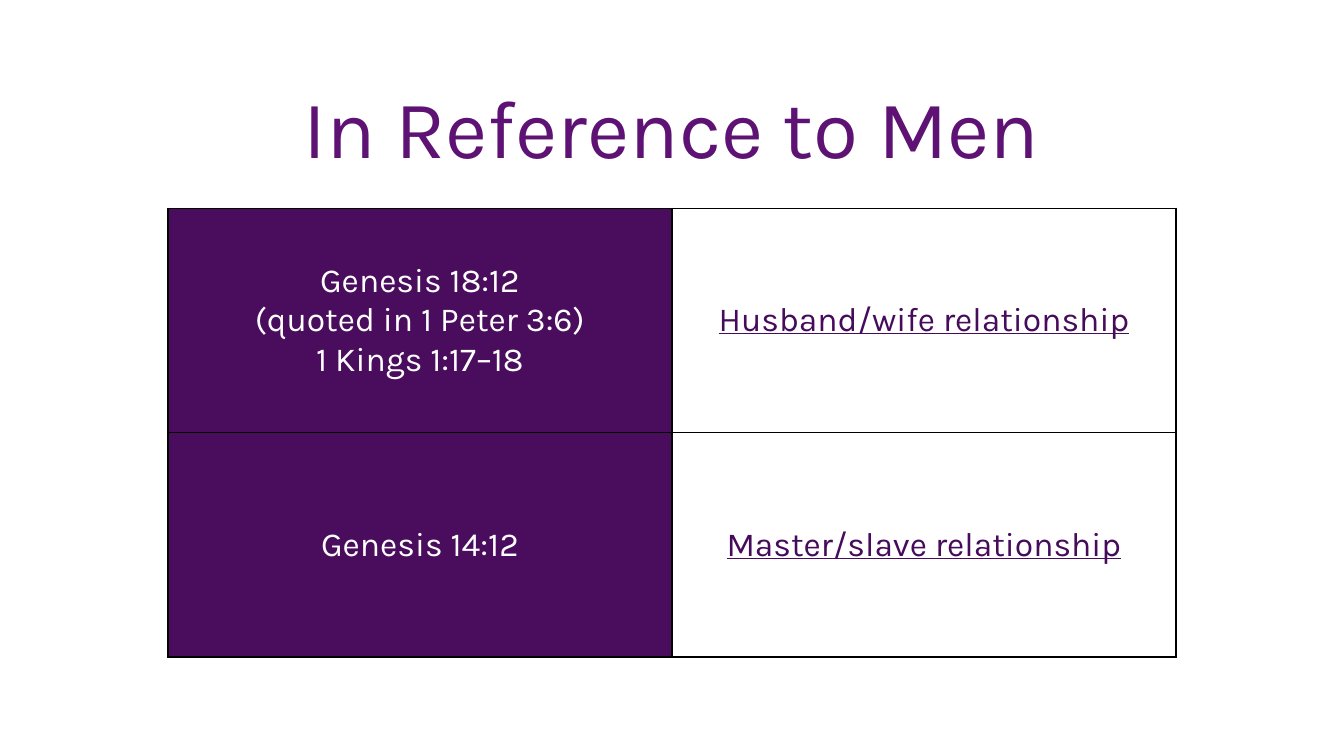
from dataclasses import dataclass

from lxml.etree import SubElement
from pptx import Presentation
from pptx.dml.color import RGBColor
from pptx.enum.text import MSO_ANCHOR, PP_ALIGN
from pptx.oxml.ns import qn
from pptx.slide import Slide
from pptx.table import _Cell as Cell
from pptx.text.text import _Paragraph as Paragraph
from pptx.util import Inches, Pt

TITLE_PURPLE = RGBColor(0x5D, 0x12, 0x74)
PANEL_PURPLE = RGBColor(0x4A, 0x0D, 0x5E)
LINK_PURPLE = RGBColor(0x46, 0x0C, 0x5B)
WHITE = RGBColor(0xFF, 0xFF, 0xFF)
BLACK = RGBColor(0x00, 0x00, 0x00)

FONT = "Karla"
OUTER_LINE = Pt(1)
ROW_LINE = Pt(0.5)


@dataclass(frozen=True)
class Usage:
    verses: tuple[str, ...]
    relationship: str


USAGES = (
    Usage(("Genesis 18:12", "(quoted in 1 Peter 3:6)", "1 Kings 1:17–18"),
          "Husband/wife relationship"),
    Usage(("Genesis 14:12",), "Master/slave relationship"),
)


def write_line(paragraph: Paragraph, text: str, size: int, color: RGBColor,
               underline: bool = False) -> None:
    paragraph.alignment = PP_ALIGN.CENTER
    run = paragraph.add_run()
    run.text = text
    font_format = {"name": FONT, "size": Pt(size), "underline": underline}
    for attribute, value in font_format.items():
        setattr(run.font, attribute, value)
    run.font.color.rgb = color


def set_borders(cell: Cell, widths: dict[str, int]) -> None:
    """Draw black borders; sides must come in the order L, R, T, B."""
    properties = cell._tc.get_or_add_tcPr()
    for position, (side, width) in enumerate(widths.items()):
        line = SubElement(properties, qn(f"a:ln{side}"), w=str(int(width)))
        fill = SubElement(line, qn("a:solidFill"))
        SubElement(fill, qn("a:srgbClr"), val=str(BLACK))
        properties.insert(position, line)


def write_cell(cell: Cell, lines: tuple[str, ...], color: RGBColor,
               underline: bool = False) -> None:
    cell.vertical_anchor = MSO_ANCHOR.MIDDLE
    frame = cell.text_frame
    for index, text in enumerate(lines):
        paragraph = frame.add_paragraph() if index else frame.paragraphs[0]
        write_line(paragraph, text, 18, color, underline)


def add_title(slide: Slide, text: str) -> None:
    box = slide.shapes.add_textbox(Inches(0.5), Inches(0.4), Inches(9), Inches(1.17))
    frame = box.text_frame
    frame.word_wrap = True
    frame.vertical_anchor = MSO_ANCHOR.MIDDLE
    frame.paragraphs[0].line_spacing = 0.9
    write_line(frame.paragraphs[0], text, 44, TITLE_PURPLE)


def add_usage_table(slide: Slide, usages: tuple[Usage, ...]) -> None:
    table = slide.shapes.add_table(len(usages), 2, Inches(1.25), Inches(1.55),
                                   Inches(7.5), Inches(3.34)).table
    table.first_row = False
    table.horz_banding = False
    last = len(usages) - 1
    for row, usage in enumerate(usages):
        verses, relationship = table.cell(row, 0), table.cell(row, 1)
        write_cell(verses, usage.verses, WHITE)
        verses.fill.solid()
        verses.fill.fore_color.rgb = PANEL_PURPLE
        write_cell(relationship, (usage.relationship,), LINK_PURPLE, underline=True)
        relationship.fill.background()
        widths = {
            "L": OUTER_LINE,
            "R": OUTER_LINE,
            "T": ROW_LINE if row else OUTER_LINE,
            "B": ROW_LINE if row < last else OUTER_LINE,
        }
        for cell in (verses, relationship):
            set_borders(cell, widths)


def main() -> None:
    deck = Presentation()
    deck.slide_width = Inches(10)
    deck.slide_height = deck.slide_width * 9 // 16
    slide = deck.slides.add_slide(deck.slide_layouts[6])
    slide.background.fill.solid()
    slide.background.fill.fore_color.rgb = WHITE
    add_title(slide, "In Reference to Men")
    add_usage_table(slide, USAGES)
    deck.save("out.pptx")


if __name__ == "__main__":
    main()
